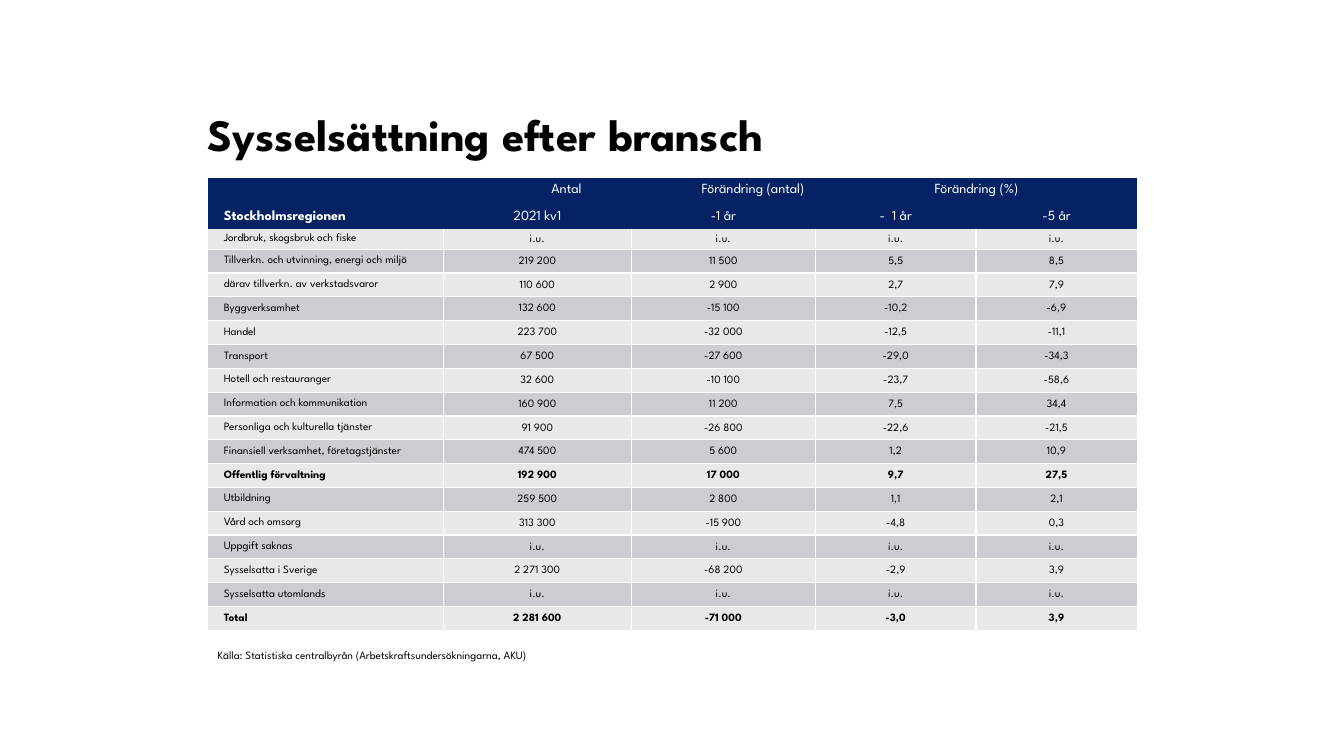
from pptx import Presentation
from pptx.dml.color import RGBColor
from pptx.enum.text import MSO_ANCHOR as ANCHOR, MSO_AUTO_SIZE as AUTO, PP_ALIGN as ALIGN
from pptx.oxml.ns import qn
from pptx.util import Inches, Pt
from lxml.etree import SubElement

NAVY, LIGHT, GREY, WHITE, BLACK = "052364", "E7E8EA", "CCCDD3", "FFFFFF", "000000"
NO_STYLE = "{2D5ABB26-0587-4C30-8999-92F81FD0307C}"
COLS = [2.34, 1.86, 1.83, 1.59, 1.6]
HEAD_ROWS = [0.23, 0.23, 0.2]
BODY_HEIGHT = 3.78
LABEL_INSETS = (0.16, 0.05, 0.05, 0.05)
HEAD_INSETS = (0.05, 0.05, 0.05, 0.05)
VALUE_INSETS = (0.01, 0.01, 0.01, 0)

HEADINGS = ["Stockholmsregionen", "2021 kv1", "-1 år", "-  1 år", "-5 år"]
INDUSTRIES = [
    ("Jordbruk, skogsbruk och fiske", "i.u.", "i.u.", "i.u.", "i.u."),
    ("Tillverkn. och utvinning, energi och miljö", "219 200", "11 500", "5,5", "8,5"),
    ("därav tillverkn. av verkstadsvaror", "110 600", "2 900", "2,7", "7,9"),
    ("Byggverksamhet", "132 600", "-15 100", "-10,2", "-6,9"),
    ("Handel", "223 700", "-32 000", "-12,5", "-11,1"),
    ("Transport", "67 500", "-27 600", "-29,0", "-34,3"),
    ("Hotell och restauranger", "32 600", "-10 100", "-23,7", "-58,6"),
    ("Information och kommunikation", "160 900", "11 200", "7,5", "34,4"),
    ("Personliga och kulturella tjänster", "91 900", "-26 800", "-22,6", "-21,5"),
    ("Finansiell verksamhet, företagstjänster", "474 500", "5 600", "1,2", "10,9"),
    ("Offentlig förvaltning", "192 900", "17 000", "9,7", "27,5"),
    ("Utbildning", "259 500", "2 800", "1,1", "2,1"),
    ("Vård och omsorg", "313 300", "-15 900", "-4,8", "0,3"),
    ("Uppgift saknas", "i.u.", "i.u.", "i.u.", "i.u."),
    ("Sysselsatta i Sverige", "2 271 300", "-68 200", "-2,9", "3,9"),
    ("Sysselsatta utomlands", "i.u.", "i.u.", "i.u.", "i.u."),
    ("Total", "2 281 600", "-71 000", "-3,0", "3,9"),
]
BOLD_ROWS = {"Offentlig förvaltning", "Total"}


def rgb(value):
    return RGBColor.from_string(value)


def assign(obj, values):
    for name, value in values.items():
        setattr(obj, name, value)


class Deck:
    font = "League Spartan"

    def __init__(self):
        self.prs = Presentation()
        assign(self.prs, {"slide_width": Inches(13.33), "slide_height": Inches(7.5)})
        self.s = self.prs.slides.add_slide(self.prs.slide_layouts[5])

    def add_text(self, tf, text, size, color=BLACK, bold=False, align=ALIGN.LEFT):
        p = tf.paragraphs[0]
        p.alignment = align
        r = p.add_run()
        r.text = text
        assign(r.font, {"name": self.font, "size": Pt(size), "bold": bold})
        r.font.color.rgb = rgb(color)
        return p

    def insets(self, obj, values):
        sides = ("margin_left", "margin_top", "margin_right", "margin_bottom")
        assign(obj, dict(zip(sides, map(Inches, values))))

    def title(self, x, y, w, h, text):
        sp = self.s.shapes.title
        assign(sp, dict(zip(("left", "top", "width", "height"), map(Inches, (x, y, w, h)))))
        tf = sp.text_frame
        assign(tf, {"vertical_anchor": ANCHOR.BOTTOM, "word_wrap": True, "auto_size": AUTO.NONE})
        self.insets(tf, (0, 0, 0, 0))
        self.add_text(tf, text, 32, bold=True)

    def note(self, x, y, w, h, text):
        sp = self.s.shapes.add_textbox(*map(Inches, (x, y, w, h)))
        assign(sp.text_frame, {"word_wrap": False, "auto_size": AUTO.SHAPE_TO_FIT_TEXT})
        self.add_text(sp.text_frame, text, 8)

    def table(self, x, y, cols, rows):
        box = map(Inches, (x, y, sum(cols), sum(rows)))
        tbl = self.s.shapes.add_table(len(rows), len(cols), *box).table
        tbl._tbl.tblPr.find(qn("a:tableStyleId")).text = NO_STYLE
        for col, width in zip(tbl.columns, cols):
            col.width = Inches(width)
        for row, height in zip(tbl.rows, rows):
            row.height = Inches(height)
        return tbl

    def cell(self, cell, text, fill, insets, edges="", anchor=ANCHOR.MIDDLE, **style):
        for edge in edges:
            ln = SubElement(cell._tc.get_or_add_tcPr(), qn("a:ln" + edge), w=str(Pt(1)))
            SubElement(SubElement(ln, qn("a:solidFill")), qn("a:srgbClr"), val=WHITE)
        cell.fill.solid()
        cell.fill.fore_color.rgb = rgb(fill)
        cell.vertical_anchor = anchor
        self.insets(cell, insets)
        if text:
            return self.add_text(cell.text_frame, text, **style)
        cell.text_frame.paragraphs[0].font.size = Pt(style["size"])

    def tab_stop(self, p, pos):
        tabs = SubElement(p._p.get_or_add_pPr(), qn("a:tabLst"))
        SubElement(tabs, qn("a:tab"), pos=str(Inches(pos)), algn="l")


def main():
    deck = Deck()
    deck.title(2.06, 0.37, 9.22, 1.22, "Sysselsättning efter bransch")

    # Table grid
    later_rows = len(INDUSTRIES) - 1
    rows = HEAD_ROWS + [BODY_HEIGHT / later_rows] * later_rows
    tbl = deck.table(2.06, 1.77, COLS, rows)

    # Group headings
    head = {"size": 10, "color": WHITE}
    for c in (1, 3):
        tbl.cell(0, c).merge(tbl.cell(0, c + 1))
    for c in (0, 2, 4):
        deck.cell(tbl.cell(0, c), "", NAVY, HEAD_INSETS, **head)
    p = deck.cell(tbl.cell(0, 1), "Antal\tFörändring (antal)", NAVY, (1.07, 0.05, 0.05, 0.05),
                  anchor=ANCHOR.TOP, **head)
    deck.tab_stop(p, 1.49)
    deck.cell(tbl.cell(0, 3), "Förändring (%)", NAVY, HEAD_INSETS,
              anchor=ANCHOR.TOP, align=ALIGN.CENTER, **head)

    # Column headings
    for c, text in enumerate(HEADINGS):
        deck.cell(tbl.cell(1, c), text, NAVY, HEAD_INSETS if c else LABEL_INSETS, bold=c == 0,
                  align=ALIGN.CENTER if c else ALIGN.LEFT, **head)

    # Industry rows
    for i, record in enumerate(INDUSTRIES):
        for c, text in enumerate(record):
            deck.cell(tbl.cell(i + 2, c), text, GREY if i % 2 else LIGHT,
                      VALUE_INSETS if c else LABEL_INSETS,
                      edges="LRTB" if i else "LRB",
                      anchor=ANCHOR.MIDDLE if i or c else ANCHOR.TOP,
                      size=8, bold=record[0] in BOLD_ROWS,
                      align=ALIGN.CENTER if c else ALIGN.LEFT)

    # Source line
    deck.note(2.06, 6.38, 3.8, 0.24,
              "Källa: Statistiska centralbyrån (Arbetskraftsundersökningarna, AKU)")
    deck.prs.save("out.pptx")


if __name__ == "__main__":
    main()
